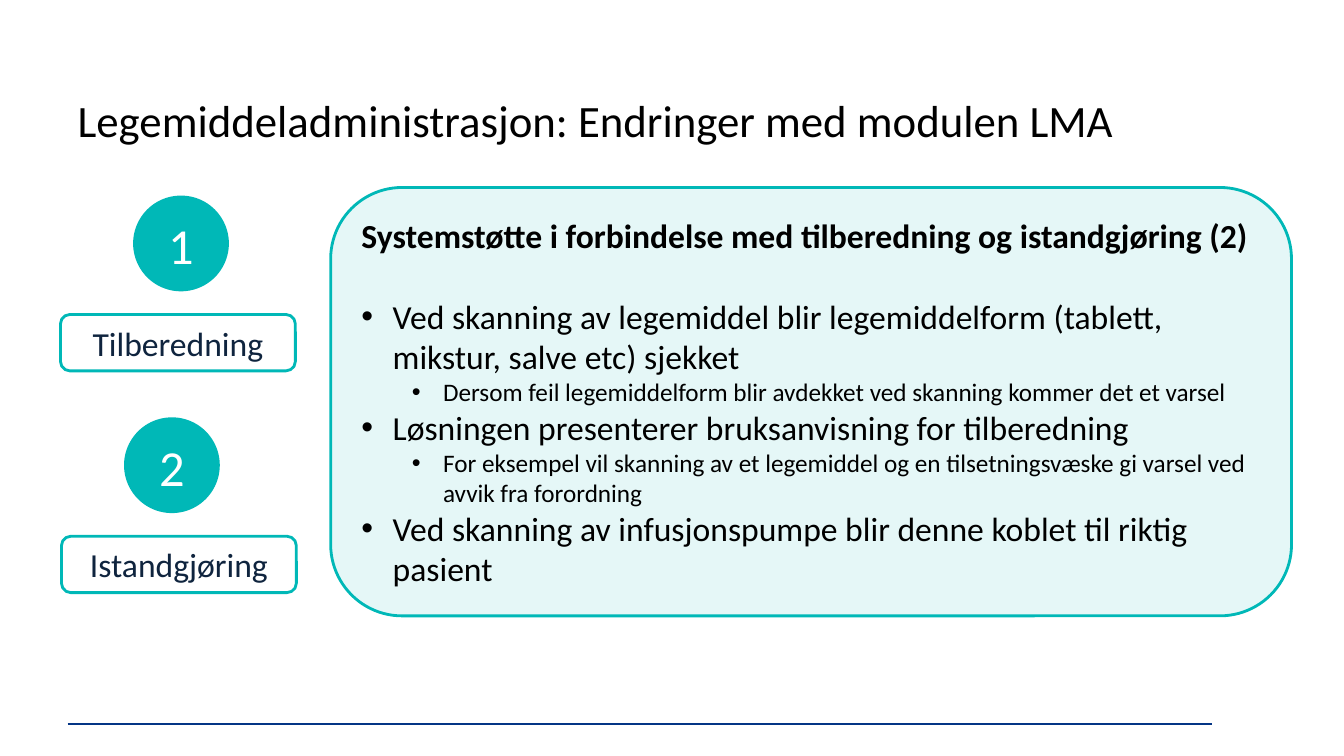
from lxml.etree import SubElement
from pptx import Presentation
from pptx.dml.color import RGBColor
from pptx.enum.shapes import MSO_CONNECTOR, MSO_SHAPE
from pptx.enum.text import MSO_ANCHOR, PP_ALIGN
from pptx.oxml.ns import qn
from pptx.util import Inches, Pt

COLORS = {
    "teal": "00B8B7",
    "navy": "0F243E",
    "rule": "043585",
    "black": "000000",
    "white": "FFFFFF",
}
FONT = "Calibri"
TITLE = "Legemiddeladministrasjon: Endringer med modulen LMA"
HEADING = "Systemstøtte i forbindelse med tilberedning og istandgjøring (2)"
POINTS = [
    (0, "Ved skanning av legemiddel blir legemiddelform (tablett, mikstur, salve etc) sjekket"),
    (1, "Dersom feil legemiddelform blir avdekket ved skanning kommer det et varsel"),
    (0, "Løsningen presenterer bruksanvisning for tilberedning"),
    (1, "For eksempel vil skanning av et legemiddel og en tilsetningsvæske gi varsel ved avvik fra forordning"),
    (0, "Ved skanning av infusjonspumpe blir denne koblet til riktig pasient"),
]
STEPS = [
    ("1", "Tilberedning", 0.6, 1.94, 0.72),
    ("2", "Istandgjøring", 0.61, 4.14, 0.62),
]


def color(name):
    return RGBColor.from_string(COLORS[name])


def add_text(paragraph, text, size, ink, bold=False, align=PP_ALIGN.LEFT):
    paragraph.alignment = align
    run = paragraph.add_run()
    run.text = text
    run.font.name = FONT
    run.font.size = Pt(size)
    run.font.bold = bold
    run.font.color.rgb = color(ink)


def add_box(slide, preset, left, top, width, height, fill, outline=None):
    box = slide.shapes.add_shape(
        preset, Inches(left), Inches(top), Inches(width), Inches(height))
    box.shadow.inherit = False
    box.fill.solid()
    box.fill.fore_color.rgb = color(fill)
    if outline:
        box.line.color.rgb = color(outline)
        box.line.width = Pt(2)
    else:
        box.line.fill.background()
    return box


def add_title(slide, left, top, width, height):
    title = slide.shapes.title
    title.left, title.top = Inches(left), Inches(top)
    title.width, title.height = Inches(width), Inches(height)
    title.text_frame.vertical_anchor = MSO_ANCHOR.MIDDLE
    add_text(title.text_frame.paragraphs[0], TITLE, 32, "black")


def add_step(slide, number, name, left, top, badge_offset):
    label = add_box(slide, MSO_SHAPE.ROUNDED_RECTANGLE,
                    left, top + 1.18, 2.33, 0.56, "white", "teal")
    add_text(label.text_frame.paragraphs[0], name, 24, "navy", align=PP_ALIGN.CENTER)
    badge = add_box(slide, MSO_SHAPE.OVAL, left + badge_offset, top, 0.95, 0.95, "teal")
    frame = badge.text_frame
    frame.margin_left = frame.margin_right = frame.margin_bottom = 0
    frame.margin_top = Inches(0.02)
    add_text(frame.paragraphs[0], number, 36, "white", align=PP_ALIGN.CENTER)


def add_bullet(paragraph, level):
    paragraph.level = level
    properties = paragraph._p.get_or_add_pPr()
    properties.set("marL", str(Inches(0.31 + 0.5 * level)))
    properties.set("indent", str(Inches(-0.31)))
    SubElement(properties, qn("a:buFont"), typeface="Arial")
    SubElement(properties, qn("a:buChar"), char="•")


def add_support_panel(slide, left, top, width, height):
    panel = add_box(slide, MSO_SHAPE.ROUNDED_RECTANGLE,
                    left, top, width, height, "teal", "teal")
    fill_color = panel.fill._xPr.find(qn("a:solidFill")).find(qn("a:srgbClr"))
    SubElement(fill_color, qn("a:alpha"), val="10000")
    frame = panel.text_frame
    frame.word_wrap = True
    heading = frame.paragraphs[0]
    heading.space_after = Pt(29)
    add_text(heading, HEADING, 24, "black", bold=True)
    for level, point in POINTS:
        paragraph = frame.add_paragraph()
        add_bullet(paragraph, level)
        add_text(paragraph, point, 18 if level else 24, "black")


def add_footer_rule(slide, left, top, width):
    rule = slide.shapes.add_connector(
        MSO_CONNECTOR.STRAIGHT, Inches(left), Inches(top), Inches(left + width), Inches(top))
    rule.line.color.rgb = color("rule")
    rule.line.width = Pt(1.25)
    SubElement(rule._element.spPr, qn("a:effectLst"))


def main():
    deck = Presentation()
    deck.slide_width, deck.slide_height = Inches(13.33), Inches(7.5)
    slide = deck.slides.add_slide(deck.slide_layouts[5])
    slide.background.fill.solid()
    slide.background.fill.fore_color.rgb = color("white")
    add_footer_rule(slide, 0.67, 7.18, 11.35)
    add_title(slide, 0.67, 0.8, 11.04, 0.78)
    add_support_panel(slide, 3.28, 1.86, 9.53, 4.25)
    for step in STEPS:
        add_step(slide, *step)
    deck.save("out.pptx")


if __name__ == "__main__":
    main()
